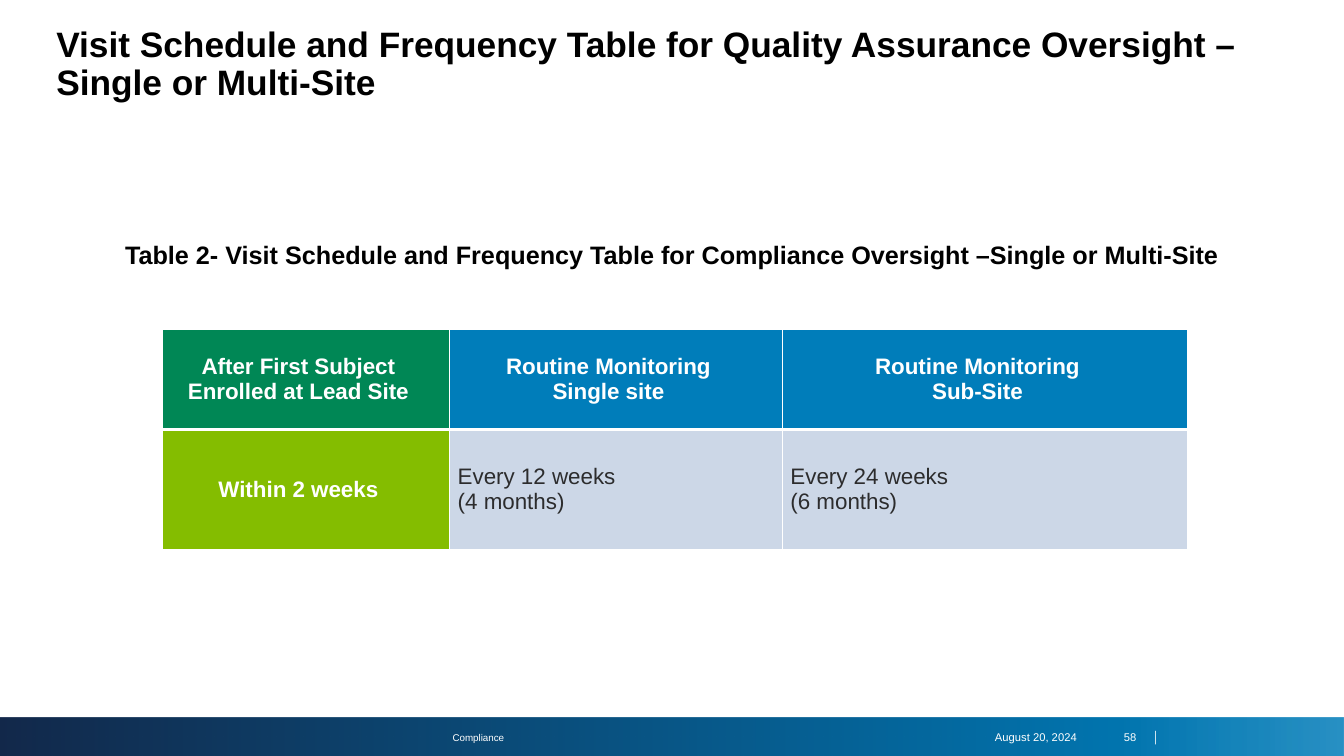
from pptx import Presentation
from pptx.dml.color import RGBColor
from pptx.enum.shapes import MSO_SHAPE
from pptx.enum.text import MSO_ANCHOR, PP_ALIGN
from pptx.oxml import parse_xml
from pptx.oxml.ns import nsdecls
from pptx.util import Inches, Pt

WHITE, BLACK, INK = "FFFFFF", "000000", "2C2C2D"
GREEN, LIME, BLUE, PALE = "008755", "84BD00", "007DBA", "CCD7E7"
LEFT, MID, RIGHT, JUST = (PP_ALIGN.LEFT, PP_ALIGN.CENTER,
                          PP_ALIGN.RIGHT, PP_ALIGN.JUSTIFY)


def color(code):
    return RGBColor.from_string(code)


def write(frame, text, size=16, ink=WHITE, bold=False, align=LEFT, space=1.0):
    """Fill a text frame, one paragraph for each line of text."""
    for i, line in enumerate(text.split("\n")):
        para = frame.paragraphs[0] if i == 0 else frame.add_paragraph()
        para.alignment = align
        para.line_spacing = space
        run = para.add_run()
        run.text = line
        run.font.name = "Arial"
        run.font.size = Pt(size)
        run.font.bold = bold
        run.font.color.rgb = color(ink)


def label(slide, box, text, wrap=True, **form):
    frame = slide.shapes.add_textbox(*map(Inches, box)).text_frame
    frame.word_wrap = wrap
    frame.vertical_anchor = MSO_ANCHOR.MIDDLE
    write(frame, text, **form)


def border(cell, low):
    """Draw white cell borders, the bottom one low points wide."""
    props = cell._tc.get_or_add_tcPr()
    for side, width in zip("LRTB", (1, 1, 1, low)):
        props.append(parse_xml(
            f'<a:ln{side} {nsdecls("a")} w="{Pt(width)}"><a:solidFill>'
            f'<a:srgbClr val="{WHITE}"/></a:solidFill></a:ln{side}>'))


def visits(slide, box):
    """Place the table of visit intervals."""
    rows = [
        [("After First Subject Enrolled at Lead Site", GREEN),
         ("Routine Monitoring\nSingle site", BLUE),
         ("Routine Monitoring\nSub-Site", BLUE)],
        [("Within 2 weeks", LIME),
         ("Every 12 weeks\n(4 months)", PALE),
         ("Every 24 weeks\n(6 months)", PALE)],
    ]
    table = slide.shapes.add_table(2, 3, *map(Inches, box)).table
    table.first_row = table.horz_banding = False
    for col, width in zip(table.columns, (2.85, 3.3, 4.02)):
        col.width = Inches(width)
    for row, height in zip(table.rows, (0.99, 1.19)):
        row.height = Inches(height)
    for r, row in enumerate(rows):
        for c, (text, fill) in enumerate(row):
            cell = table.cell(r, c)
            border(cell, 3 if r == 0 else 1)
            cell.fill.solid()
            cell.fill.fore_color.rgb = color(fill)
            cell.vertical_anchor = MSO_ANCHOR.MIDDLE
            cell.margin_left = cell.margin_top = cell.margin_bottom = Inches(0.08)
            cell.margin_right = Inches(0.23)
            plain = fill == PALE
            write(cell.text_frame, text, ink=INK if plain else WHITE,
                  bold=not plain, align=JUST if plain else MID)


def footer(slide, box):
    """Place the gradient band with its small labels."""
    band = slide.shapes.add_shape(MSO_SHAPE.RECTANGLE, *map(Inches, box))
    band.shadow.inherit = False
    band.line.fill.background()
    band.fill.gradient()
    band.fill.gradient_angle = 0
    stops = band._element.spPr.find(".//{*}gsLst")
    stops.clear()
    for pos, code, alpha in ((0, "13294B", 100), (83, "0275AF", 100), (100, BLUE, 84)):
        stops.append(parse_xml(
            f'<a:gs {nsdecls("a")} pos="{pos * 1000}"><a:srgbClr val="{code}">'
            f'<a:alpha val="{alpha * 1000}"/></a:srgbClr></a:gs>'))
    left, top = box[:2]
    for x, width, text, size, align in (
            (0.46, 8.57, "Compliance", 7, MID),
            (9.18, 1.6, "August 20, 2024", 8, RIGHT),
            (10.93, 0.44, "58", 8, RIGHT),
            (11.2, 0.4, "│", 8, RIGHT)):
        label(slide, (left + x, top + 0.08, width, 0.23), text,
              size=size, align=align)


def main():
    deck = Presentation()
    deck.slide_width, deck.slide_height = Inches(13.33), Inches(7.5)
    slide = deck.slides.add_slide(deck.slide_layouts[6])
    footer(slide, (0, 7.12, 13.33, 0.38))
    label(slide, (0.46, 0.2, 12.42, 0.9),
          "Visit Schedule and Frequency Table for Quality Assurance "
          "Oversight –Single or Multi-Site",
          size=25.2, ink=BLACK, bold=True, space=0.9)
    label(slide, (1.12, 2.3, 11.09, 0.44),
          "Table 2- Visit Schedule and Frequency Table for Compliance "
          "Oversight –Single or Multi-Site",
          wrap=False, size=18, ink=BLACK, bold=True, align=MID)
    visits(slide, (1.61, 3.27, 10.17, 2.18))
    deck.save("out.pptx")


if __name__ == "__main__":
    main()
